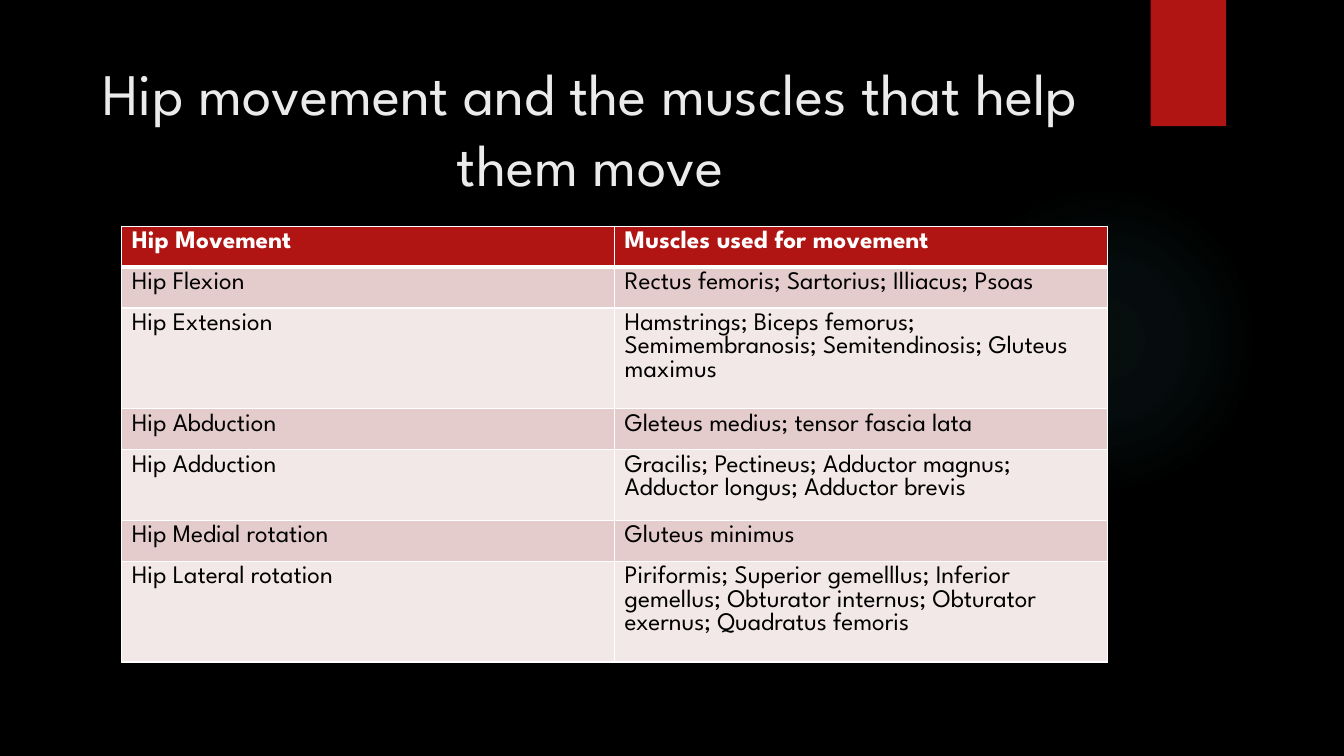
"""Build a slide with a table of hip movements and the muscles behind them."""
import lxml.etree
import pptx
import pptx.dml.color
import pptx.enum.shapes
import pptx.enum.text
import pptx.oxml
import pptx.oxml.ns
import pptx.util

Cm = pptx.util.Cm
Pt = pptx.util.Pt
RGBColor = pptx.dml.color.RGBColor
qn = pptx.oxml.ns.qn

BLACK = RGBColor(0x00, 0x00, 0x00)
WHITE = RGBColor(0xFF, 0xFF, 0xFF)
RED = RGBColor(0xB0, 0x15, 0x13)
TEAL = RGBColor(0x50, 0xB9, 0xC1)
TITLE_GREY = RGBColor(0xEB, 0xEB, 0xEB)
DARK_BAND = RGBColor(0xE4, 0xCC, 0xCC)
LIGHT_BAND = RGBColor(0xF2, 0xE8, 0xE7)
FONT = "League Spartan"

MOVEMENTS = [
    ("Hip Movement", "Muscles used for movement"),
    ("Hip Flexion", "Rectus femoris; Sartorius; Illiacus; Psoas"),
    ("Hip Extension", "Hamstrings; Biceps femorus; Semimembranosis; "
                      "Semitendinosis; Gluteus maximus"),
    ("Hip Abduction", "Gleteus medius; tensor fascia lata"),
    ("Hip Adduction", "Gracilis; Pectineus; Adductor magnus;\n"
                      "Adductor longus; Adductor brevis"),
    ("Hip Medial rotation", "Gluteus minimus"),
    ("Hip Lateral rotation", "Piriformis; Superior gemelllus; Inferior gemellus; "
                             "Obturator internus; Obturator exernus; "
                             "Quadratus femoris"),
]


def add_run(paragraph, text, size, color, bold=False):
    run = paragraph.add_run()
    run.text = text
    run.font.name = FONT
    run.font.size = Pt(size)
    run.font.bold = bold
    run.font.color.rgb = color


def add_border(cell, side, width):
    border = lxml.etree.SubElement(
        cell._tc.get_or_add_tcPr(), qn(f"a:ln{side}"), w=str(Pt(width)))
    fill = lxml.etree.SubElement(border, qn("a:solidFill"))
    lxml.etree.SubElement(fill, qn("a:srgbClr"), val=str(WHITE))


deck = pptx.Presentation()
deck.slide_width = Cm(33.87)
deck.slide_height = Cm(19.05)
slide = deck.slides.add_slide(deck.slide_layouts[6])
slide.background.fill.solid()
slide.background.fill.fore_color.rgb = BLACK

glow = slide.shapes.add_shape(
    pptx.enum.shapes.MSO_SHAPE.OVAL, Cm(23.9), Cm(4.65), Cm(7.82), Cm(7.82))
glow.shadow.inherit = False
glow.line.fill.background()
glow.fill.gradient()
gradient = glow._element.spPr.find(qn("a:gradFill"))
for part in list(gradient):
    gradient.remove(part)
stops = lxml.etree.SubElement(gradient, qn("a:gsLst"))
for position, opacity in [(0, 7), (36, 6), (69, 0)]:
    stop = lxml.etree.SubElement(stops, qn("a:gs"), pos=str(position * 1000))
    tint = lxml.etree.SubElement(stop, qn("a:srgbClr"), val=str(TEAL))
    lxml.etree.SubElement(tint, qn("a:alpha"), val=str(opacity * 1000))
radial = lxml.etree.SubElement(gradient, qn("a:path"), path="circle")
lxml.etree.SubElement(
    radial, qn("a:fillToRect"), l="50000", t="50000", r="50000", b="50000")

ribbon = slide.shapes.add_shape(
    pptx.enum.shapes.MSO_SHAPE.RECTANGLE, Cm(29), 0, Cm(1.9), Cm(3.18))
ribbon.shadow.inherit = False
ribbon.fill.solid()
ribbon.fill.fore_color.rgb = RED
ribbon.line.fill.background()

title = slide.shapes.add_textbox(Cm(1.8), Cm(1.27), Cm(26.14), Cm(3.89)).text_frame
title.word_wrap = True
title.vertical_anchor = pptx.enum.text.MSO_ANCHOR.MIDDLE
heading = title.paragraphs[0]
heading.alignment = pptx.enum.text.PP_ALIGN.CENTER
add_run(heading, "Hip movement and the muscles that help them move", 42, TITLE_GREY)

muscle_frame = slide.shapes.add_table(
    len(MOVEMENTS), 2, Cm(3.07), Cm(5.7), Cm(24.84), Cm(7.21))
muscle_frame.height = Cm(10.97)
muscles = muscle_frame.table
for row, entry in enumerate(MOVEMENTS):
    header = row == 0
    band = RED if header else DARK_BAND if row % 2 else LIGHT_BAND
    for column, text in enumerate(entry):
        cell = muscles.cell(row, column)
        for side in "LRTB":
            thick = (header and side == "B") or (row == 1 and side == "T")
            add_border(cell, side, 3 if thick else 1)
        cell.fill.solid()
        cell.fill.fore_color.rgb = band
        for index, line in enumerate(text.split("\n")):
            frame = cell.text_frame
            paragraph = frame.add_paragraph() if index else frame.paragraphs[0]
            add_run(paragraph, line, 18, WHITE if header else BLACK, header)

deck.save("out.pptx")
